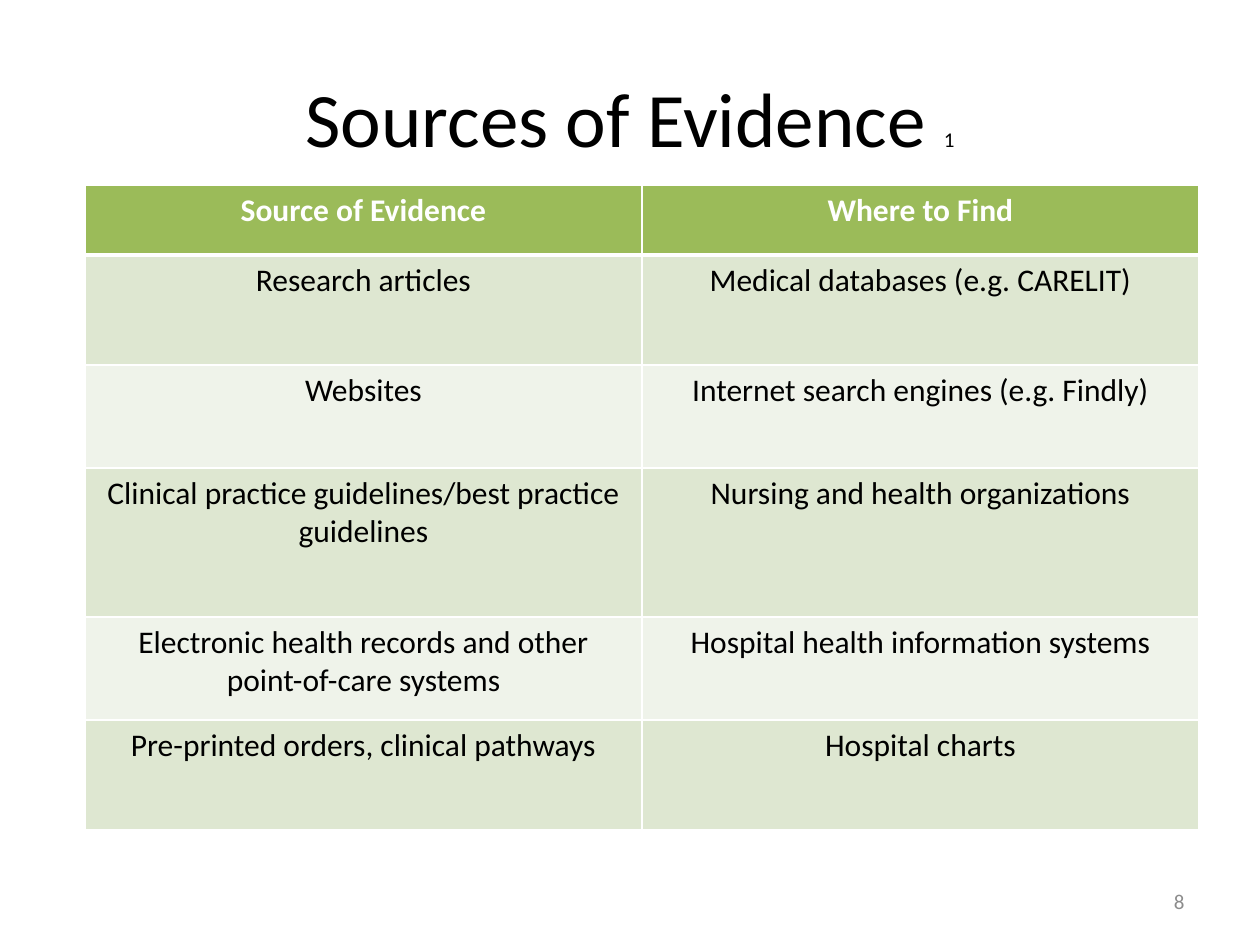
from dataclasses import dataclass

from lxml.etree import SubElement
from pptx import Presentation
from pptx.dml.color import RGBColor as Rgb
from pptx.enum.text import MSO_ANCHOR as Anchor, PP_ALIGN as Align
from pptx.oxml.ns import qn
from pptx.util import Emu, Pt

SCALE = 914400 // 126


@dataclass(frozen=True)
class Theme:
    font: str = "Calibri"
    ink: str = "000000"
    white: str = "FFFFFF"
    muted: str = "8C8C8C"
    head: str = "9BBB59"
    bands: tuple = ("DEE7D1", "EFF3EA")
    title: int = 44
    body: int = 18
    small: int = 12


THEME = Theme()

ROWS = [
    ("Source of Evidence", "Where to Find"),
    ("Research articles", "Medical databases (e.g. CARELIT)"),
    ("Websites", "Internet search engines (e.g. Findly)"),
    ("Clinical practice guidelines/best practice guidelines",
     "Nursing and health organizations"),
    ("Electronic health records and other point-of-care systems",
     "Hospital health information systems"),
    ("Pre-printed orders, clinical pathways", "Hospital charts"),
]
HEIGHTS = [70, 110, 103, 149, 103, 110]
COL_W = 557


def px(num):
    return Emu(num * SCALE)


def style(run, size, color, bold=False):
    font = run.font
    font.name, font.size, font.bold = THEME.font, Pt(size), bold
    font.color.rgb = Rgb.from_string(color)


def add_title(slide):
    title = slide.shapes.title
    title.left, title.top, title.width, title.height = map(
        px, (63, 38, 1134, 157))
    frame = title.text_frame
    frame.vertical_anchor = Anchor.MIDDLE
    para = frame.paragraphs[0]
    para.alignment = Align.CENTER
    for text, size in (("Sources of Evidence ", THEME.title),
                       ("1", THEME.small)):
        run = para.add_run()
        run.text = text
        style(run, size, THEME.ink)


def add_edges(cell, base):
    """Draw white cell borders, with the bottom one base points wide."""
    props = cell._tc.get_or_add_tcPr()
    for side, width in (("L", 1), ("R", 1), ("T", 1), ("B", base)):
        line = SubElement(props, qn(f"a:ln{side}"), w=str(Pt(width)))
        fill = SubElement(line, qn("a:solidFill"))
        SubElement(fill, qn("a:srgbClr"), val=THEME.white)


def fill_cell(cell, text, row):
    head = row == 0
    add_edges(cell, 3 if head else 1)
    cell.fill.solid()
    shade = THEME.head if head else THEME.bands[(row - 1) % 2]
    cell.fill.fore_color.rgb = Rgb.from_string(shade)
    cell.text_frame.text = text
    para = cell.text_frame.paragraphs[0]
    para.alignment = Align.CENTER
    style(para.runs[0], THEME.body, THEME.white if head else THEME.ink, head)


def add_grid(slide):
    cols = len(ROWS[0])
    table = slide.shapes.add_table(
        len(ROWS), cols, px(85), px(185),
        px(COL_W * cols), px(sum(HEIGHTS))).table
    for col in table.columns:
        col.width = px(COL_W)
    for row, (texts, height) in enumerate(zip(ROWS, HEIGHTS)):
        table.rows[row].height = px(height)
        for col, text in enumerate(texts):
            fill_cell(table.cell(row, col), text, row)


def add_number(slide):
    box = slide.shapes.add_textbox(px(903), px(876), px(294), px(50))
    frame = box.text_frame
    frame.word_wrap = True
    frame.vertical_anchor = Anchor.MIDDLE
    frame.text = "8"
    para = frame.paragraphs[0]
    para.alignment = Align.RIGHT
    style(para.runs[0], THEME.small, THEME.muted)


def main():
    prs = Presentation()
    prs.slide_width, prs.slide_height = px(1260), px(945)
    slide = prs.slides.add_slide(prs.slide_layouts[5])
    add_title(slide)
    add_grid(slide)
    add_number(slide)
    prs.save("out.pptx")


if __name__ == "__main__":
    main()
